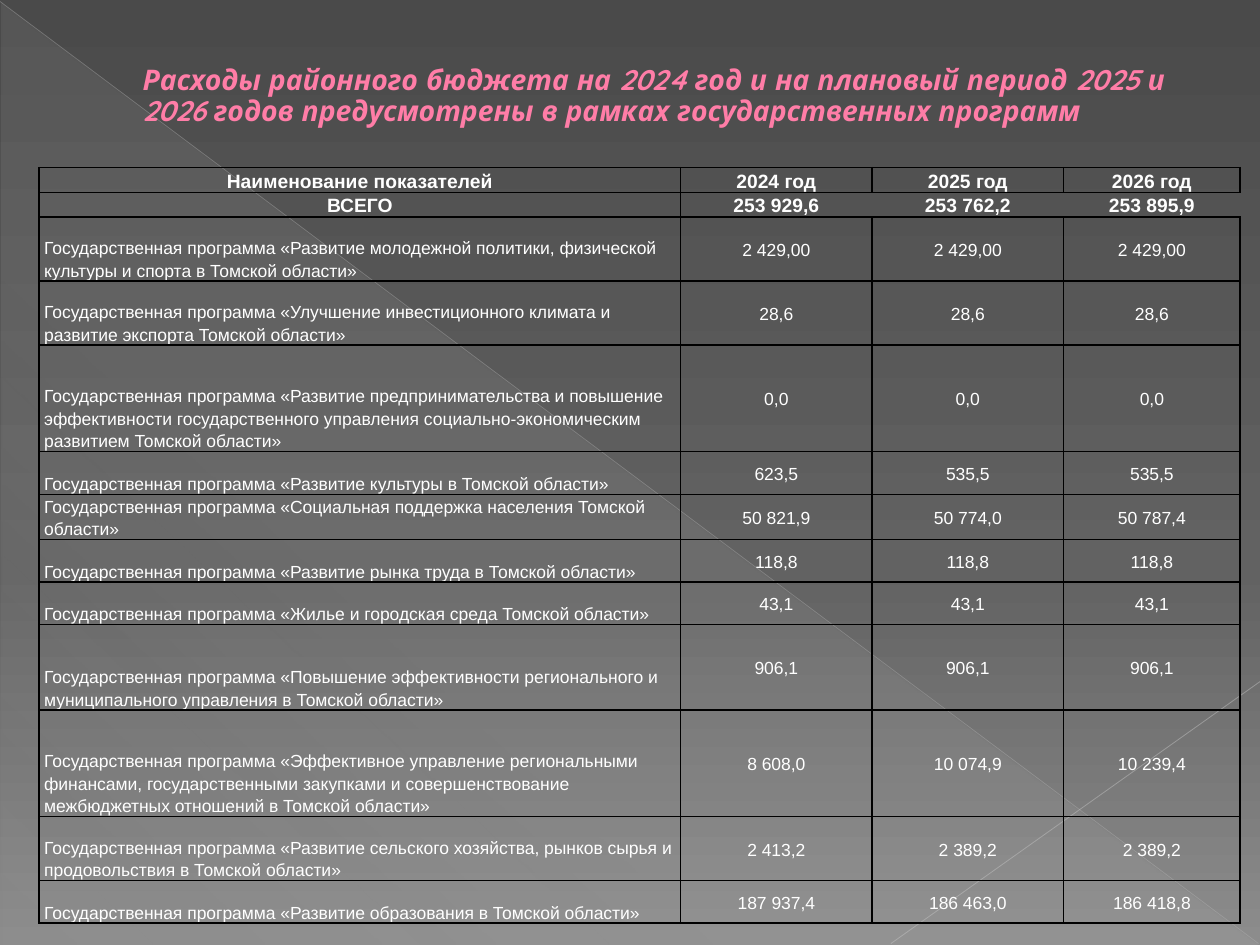
from lxml import etree
from pptx import Presentation
from pptx import util as u
from pptx.dml import color
from pptx.enum import shapes, text
from pptx.oxml import ns

TITLE = ("Расходы районного бюджета на 2024 год и на плановый период 2025 и 2026 годов "
         "предусмотрены в рамках государственных программ")
HEADER = ("Наименование показателей", "2024 год", "2025 год", "2026 год")
TOTAL = ("ВСЕГО", "253 929,6", "253 762,2", "253 895,9")
PROGRAMS = [
    ("Развитие молодежной политики, физической культуры и спорта в Томской области",
     "2 429,00", "2 429,00", "2 429,00"),
    ("Улучшение инвестиционного климата и развитие экспорта Томской области",
     "28,6", "28,6", "28,6"),
    ("Развитие предпринимательства и повышение эффективности государственного управления "
     "социально-экономическим развитием Томской области", "0,0", "0,0", "0,0"),
    ("Развитие культуры в Томской области", "623,5", "535,5", "535,5"),
    ("Социальная поддержка населения Томской области", "50 821,9", "50 774,0", "50 787,4"),
    ("Развитие рынка труда в Томской области", "118,8", "118,8", "118,8"),
    ("Жилье и городская среда Томской области", "43,1", "43,1", "43,1"),
    ("Повышение эффективности регионального и муниципального управления в Томской области",
     "906,1", "906,1", "906,1"),
    ("Эффективное управление региональными финансами, государственными закупками и "
     "совершенствование межбюджетных отношений в Томской области",
     "8 608,0", "10 074,9", "10 239,4"),
    ("Развитие сельского хозяйства, рынков сырья и продовольствия в Томской области",
     "2 413,2", "2 389,2", "2 389,2"),
    ("Развитие образования в Томской области", "187 937,4", "186 463,0", "186 418,8"),
]
ROWS = [HEADER, TOTAL] + [
    (f"Государственная программа «{name}»", *values) for name, *values in PROGRAMS]
COLUMN_WIDTHS = (12.93, 3.86, 3.86, 3.56)
ROW_UNIT = 0.43
ROW_UNITS = (1, 1, 3, 3, 5, 2, 2, 2, 2, 4, 5, 3, 2)

BACKGROUND = [(0, "4A4A4A", 100), (60, "626262", 100), (100, "8C8C8C", 100)]
TRIANGLE = [(0, "D2D2D2", 10), (70, "D2D2D2", 8), (100, "D2D2D2", 1)]
LINES = [((0, 0.03, 25.37, 19.02), "BFBFBF", 0.39, 35),
         ((25.4, 13.74, 17.96, 19.02), "C6C6C6", 0.47, 45)]
TITLE_FONT = dict(name="Quicksand", size=u.Pt(16.2), bold=True, italic=True)
HEADER_FONT = dict(name="Arial", size=u.Pt(11), bold=True)
BODY_FONT = dict(name="Arial", size=u.Pt(10), bold=False)


def rgb(value):
    return color.RGBColor.from_string(value)


def cm(values):
    return [u.Cm(value) for value in values]


def apply(target, **values):
    for name, value in values.items():
        setattr(target, name, value)


def element(parent, tag, **attributes):
    return etree.SubElement(parent, ns.qn(tag), {key: str(value) for key, value in attributes.items()})


def set_gradient(fill, stops, angle):
    fill.gradient()
    fill.gradient_angle = 0
    gradient = fill._xPr.find(ns.qn("a:gradFill"))
    gradient.find(ns.qn("a:lin")).set("ang", str(angle * 60000))
    stop_list = gradient.find(ns.qn("a:gsLst"))
    for stop in list(stop_list):
        stop_list.remove(stop)
    for position, value, opacity in stops:
        stop = element(stop_list, "a:gs", pos=position * 1000)
        element(element(stop, "a:srgbClr", val=value), "a:alpha", val=opacity * 1000)


def add_backdrop(slide):
    set_gradient(slide.background.fill, BACKGROUND, 90)
    triangle = slide.shapes.add_shape(
        shapes.MSO_SHAPE.RIGHT_TRIANGLE, *cm((0.03, 0.05, 25.35, 19)))
    triangle.shadow.inherit = False
    triangle.line.fill.background()
    set_gradient(triangle.fill, TRIANGLE, 133)
    for ends, value, width, opacity in LINES:
        line = slide.shapes.add_connector(shapes.MSO_CONNECTOR.STRAIGHT, *cm(ends))
        line.line.width = u.Pt(width)
        line.line.color.rgb = rgb(value)
        properties = line._element.spPr
        element(properties.find(".//" + ns.qn("a:srgbClr")), "a:alpha", val=opacity * 1000)
        element(properties, "a:effectLst")


def write(frame, content, font, value, **format_values):
    paragraph = frame.paragraphs[0]
    apply(paragraph, **format_values)
    run = paragraph.add_run()
    run.text = content
    apply(run.font, **font)
    run.font.color.rgb = rgb(value)
    return paragraph, run


def add_title(slide):
    title = slide.shapes.title
    left, top, width, height = cm((1.27, 0.74, 22.86, 3.89))
    apply(title, left=left, top=top, width=width, height=height)
    apply(title.text_frame, word_wrap=True, auto_size=text.MSO_AUTO_SIZE.NONE,
          vertical_anchor=text.MSO_ANCHOR.MIDDLE, margin_bottom=u.Cm(1.6))
    paragraph, run = write(title.text_frame, TITLE, TITLE_FONT, "FF7DA7",
                           alignment=text.PP_ALIGN.LEFT, line_spacing=0.9)
    apply_indent = paragraph._p.get_or_add_pPr()
    apply_indent.set("marL", str(u.Cm(1.35)))
    apply_indent.set("indent", "0")
    run_properties = run.font._element
    outline = element(run_properties, "a:ln", w=u.Pt(0.5))
    element(element(outline, "a:solidFill"), "a:srgbClr", val="B12761")
    run_properties.insert(0, outline)
    slide.shapes._spTree.append(title._element)


def set_borders(cell, hidden):
    properties = cell._tc.get_or_add_tcPr()
    for side in "LRTB":
        border = element(properties, f"a:ln{side}", w=u.Pt(1))
        if side in hidden:
            element(border, "a:noFill")
        else:
            element(element(border, "a:solidFill"), "a:srgbClr", val="000000")


def add_budget_table(slide):
    frame = slide.shapes.add_table(
        len(ROWS), len(HEADER), *cm((0.79, 3.38, sum(COLUMN_WIDTHS), ROW_UNIT * sum(ROW_UNITS))))
    table = frame.table
    apply(table, first_row=False, horz_banding=False)
    style = table._tbl.tblPr.find(ns.qn("a:tableStyleId"))
    style.text = "{2D5ABB26-0587-4C30-8999-92F81FD0307C}"
    for column, width in zip(table.columns, COLUMN_WIDTHS):
        column.width = u.Cm(width)
    for row, units in zip(table.rows, ROW_UNITS):
        row.height = u.Cm(ROW_UNIT * units)
    for row_index, values in enumerate(ROWS):
        for column_index, content in enumerate(values):
            cell = table.cell(row_index, column_index)
            is_program = row_index > 1 and column_index == 0
            is_value = row_index > 0 and column_index > 0
            hidden = ""
            if row_index == 1 and is_value:
                hidden = "R" if column_index == 1 else "LR"
            set_borders(cell, hidden)
            cell.fill.background()
            apply(cell, margin_left=u.Cm(0.1), margin_right=u.Cm(0.1), margin_top=0, margin_bottom=0,
                  vertical_anchor=text.MSO_ANCHOR.BOTTOM if is_program else text.MSO_ANCHOR.MIDDLE)
            write(cell.text_frame, content, HEADER_FONT if row_index < 2 else BODY_FONT, "FFFFFF",
                  alignment=text.PP_ALIGN.LEFT if is_program else text.PP_ALIGN.CENTER,
                  line_spacing=1.15, space_after=u.Pt(10 if is_value else 0))


def main():
    presentation = Presentation()
    apply(presentation, slide_width=u.Cm(25.4), slide_height=u.Cm(19.05))
    slide = presentation.slides.add_slide(presentation.slide_layouts[5])
    add_backdrop(slide)
    add_title(slide)
    add_budget_table(slide)
    presentation.save("out.pptx")


if __name__ == "__main__":
    main()
